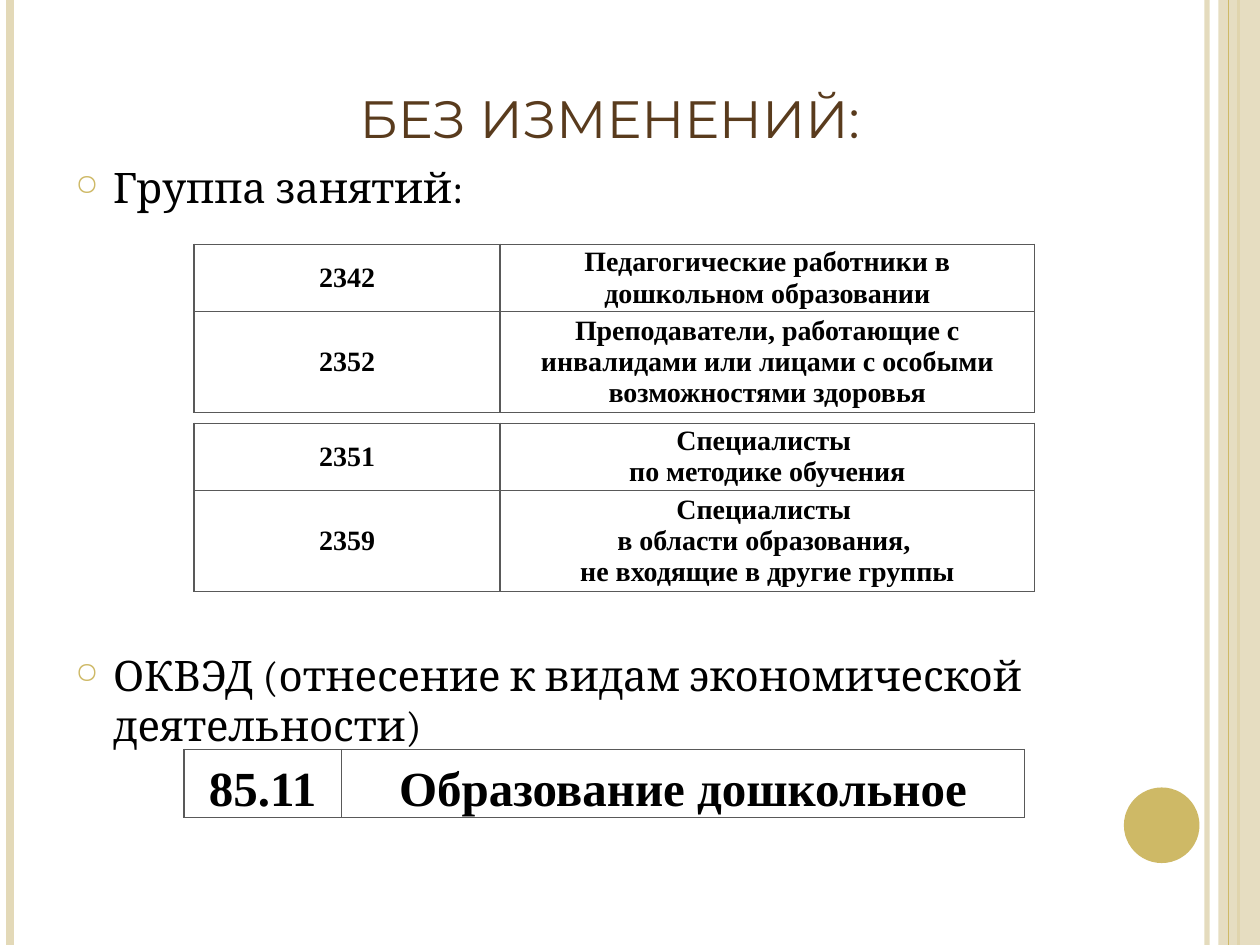
import pptx
import pptx.dml.color
import pptx.enum.shapes
import pptx.enum.text
import pptx.oxml
import pptx.oxml.ns
import pptx.util
from lxml import etree

Inches = pptx.util.Inches
Pt = pptx.util.Pt
RGBColor = pptx.dml.color.RGBColor
Shape = pptx.enum.shapes.MSO_SHAPE
Anchor = pptx.enum.text.MSO_ANCHOR
Align = pptx.enum.text.PP_ALIGN
qn = pptx.oxml.ns.qn

SAND = RGBColor(0xE3, 0xD9, 0xB8)
GOLD = RGBColor(0xCE, 0xB9, 0x66)
BROWN = RGBColor(0x59, 0x3B, 0x1D)
BLACK = RGBColor(0, 0, 0)
GRAY = RGBColor(0x59, 0x59, 0x59)

PAGE_WIDTH, PAGE_HEIGHT = 10, 7.5


def set_opacity(element, percent):
    color = next(element.iter(qn("a:srgbClr")))
    etree.SubElement(color, qn("a:alpha"), val=str(percent * 1000))


def add_stripe(page, x, color, width, opacity=100):
    """Vertical line over the full page height."""
    line = page.shapes.add_connector(
        pptx.enum.shapes.MSO_CONNECTOR.STRAIGHT,
        Inches(x), 0, Inches(x), Inches(PAGE_HEIGHT))
    line.line.color.rgb = color
    line.line.width = Pt(width)
    properties = line._element.spPr
    if opacity < 100:
        set_opacity(properties, opacity)
    etree.SubElement(properties, qn("a:effectLst"))


def add_solid(page, kind, box, color, opacity=100):
    shape = page.shapes.add_shape(kind, *map(Inches, box))
    shape.shadow.inherit = False
    shape.fill.solid()
    shape.fill.fore_color.rgb = color
    shape.line.fill.background()
    if opacity < 100:
        set_opacity(shape._element.spPr, opacity)


def add_decoration(page):
    add_stripe(page, 9.58, SAND, 3, 93)
    add_stripe(page, 0.08, SAND, 4.5)
    add_stripe(page, 9.83, GOLD, 1.5)
    add_solid(page, Shape.RECTANGLE, (9.67, 0, PAGE_WIDTH - 9.67, PAGE_HEIGHT), SAND, 87)
    add_stripe(page, 9.75, GOLD, 0.75)
    add_solid(page, Shape.OVAL, (8.92, 6.25, 0.6, 0.6), GOLD)


def style_font(para, name, size, color, bold=False):
    para.font.name = name
    para.font.size = Pt(size)
    para.font.color.rgb = color
    para.font.bold = bold


def add_title(page, box, text):
    frame = page.shapes.add_textbox(*map(Inches, box)).text_frame
    frame.word_wrap = True
    frame.vertical_anchor = Anchor.BOTTOM
    para = frame.paragraphs[0]
    para.text = text
    para.alignment = Align.CENTER
    style_font(para, "Montserrat", 30, BROWN)


def add_bullet(para):
    properties = para._p.get_or_add_pPr()
    properties.set("marL", str(Inches(0.3)))
    properties.set("indent", str(-Inches(0.3)))
    bullet = pptx.oxml.parse_xml(
        f'<a:b {pptx.oxml.ns.nsdecls("a")}>'
        f'<a:buClr><a:srgbClr val="{GOLD}"/></a:buClr>'
        '<a:buSzPct val="70000"/><a:buChar char="○"/></a:b>')
    position = properties.find(qn("a:defRPr"))
    for part in list(bullet):
        position.addprevious(part)


def add_body(page, box, items):
    """Bulleted text; each item is (text, space before in points)."""
    frame = page.shapes.add_textbox(*map(Inches, box)).text_frame
    frame.word_wrap = True
    for index, (text, gap) in enumerate(items):
        para = frame.add_paragraph() if index else frame.paragraphs[0]
        para.text = text
        para.space_before = Pt(gap)
        style_font(para, "Cambria", 24, BLACK)
        add_bullet(para)


def add_borders(cell):
    properties = cell._tc.get_or_add_tcPr()
    for index, side in enumerate(("lnL", "lnR", "lnT", "lnB")):
        properties.insert(index, pptx.oxml.parse_xml(
            f'<a:{side} {pptx.oxml.ns.nsdecls("a")} w="{Pt(1)}"><a:solidFill>'
            f'<a:srgbClr val="{GRAY}"/></a:solidFill></a:{side}>'))


def add_code_table(page, left, top, widths, heights, rows, size=16,
                   anchor=Anchor.MIDDLE, line_spacing=None, space_after=None):
    """Bordered table of codes and their names."""
    table = page.shapes.add_table(
        len(rows), len(widths), Inches(left), Inches(top),
        Inches(sum(widths)), Inches(sum(heights))).table
    table.first_row = table.horz_banding = False
    for column, width in zip(table.columns, widths):
        column.width = Inches(width)
    for row, height, texts in zip(table.rows, heights, rows):
        row.height = Inches(height)
        for cell, text in zip(row.cells, texts):
            cell.fill.background()
            add_borders(cell)
            cell.vertical_anchor = anchor
            cell.margin_left = cell.margin_right = Inches(0.02)
            cell.margin_top = cell.margin_bottom = 0
            cell.text_frame.text = text
            for para in cell.text_frame.paragraphs:
                para.alignment = Align.CENTER
                para.line_spacing = line_spacing
                if space_after:
                    para.space_after = Pt(space_after)
                style_font(para, "Times New Roman", size, BLACK, True)


def main():
    deck = pptx.Presentation()
    deck.slide_width = Inches(PAGE_WIDTH)
    deck.slide_height = Inches(PAGE_HEIGHT)
    page = deck.slides.add_slide(deck.slide_layouts[6])

    add_decoration(page)
    add_body(page, (0.5, 1.23, 8.83, 5.47), [
        ("Группа занятий:", 6),
        ("ОКВЭД (отнесение к видам экономической деятельности)", 250),
    ])

    # Occupation groups
    groups = [
        (1.94, [("2342", "Педагогические работники в дошкольном образовании"),
                ("2352", "Преподаватели, работающие с инвалидами или лицами "
                         "с особыми возможностями здоровья")]),
        (3.36, [("2351", "Специалисты \nпо методике обучения"),
                ("2359", "Специалисты \nв области образования, \n"
                         "не входящие в другие группы")]),
    ]
    for top, rows in groups:
        add_code_table(page, 1.54, top, (2.43, 4.24), (0.49, 0.74), rows)

    # Economic activity
    add_code_table(page, 1.46, 5.95, (1.25, 5.42), (0.49,),
                   [("85.11", "Образование дошкольное")], size=28,
                   anchor=Anchor.BOTTOM, line_spacing=1.15, space_after=10)

    add_title(page, (0.51, 0.3, 8.66, 0.93), "БЕЗ ИЗМЕНЕНИЙ:")
    deck.save("out.pptx")


if __name__ == "__main__":
    main()
